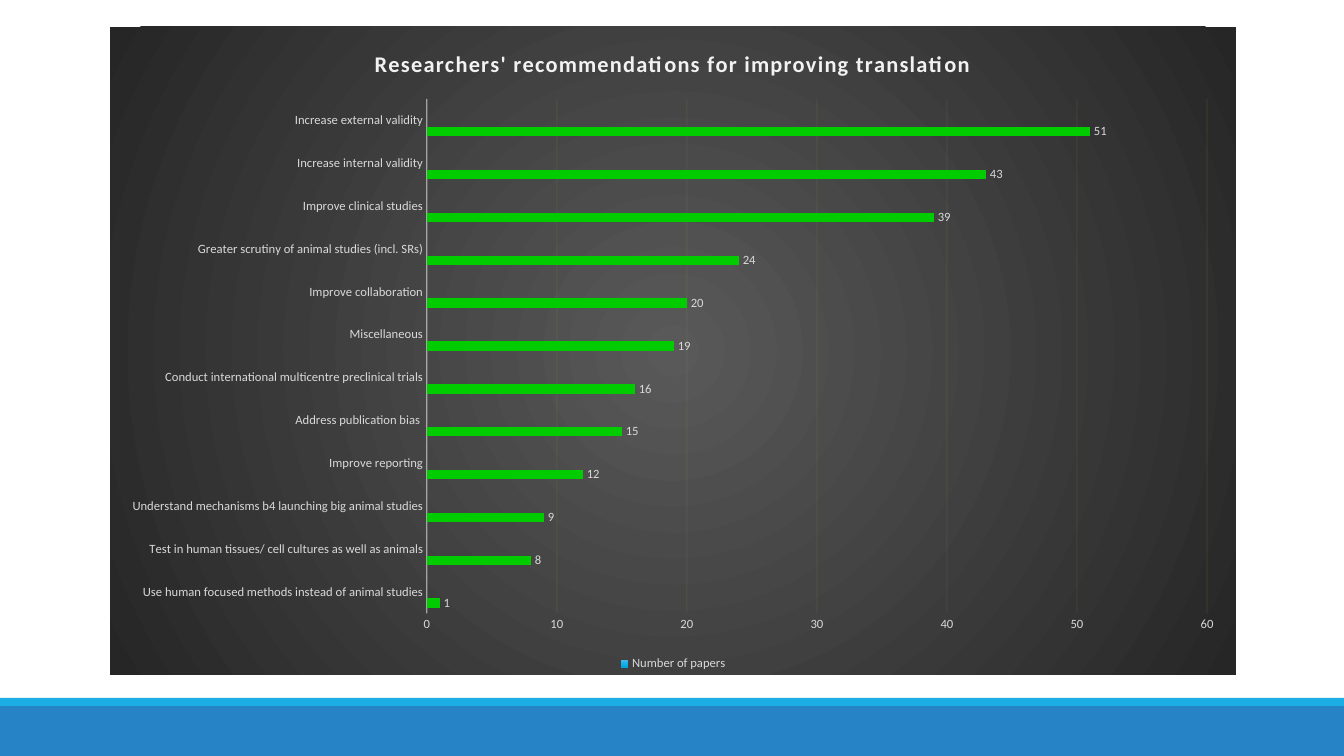
"""Build a slide with a bar chart of recommendations for improving translation."""
from dataclasses import dataclass

from lxml import etree
from pptx import Presentation
from pptx.chart.data import CategoryChartData
from pptx.dml.color import RGBColor
from pptx.enum.chart import XL_CHART_TYPE, XL_LABEL_POSITION, XL_LEGEND_POSITION, XL_TICK_MARK
from pptx.enum.shapes import MSO_SHAPE
from pptx.oxml.ns import qn
from pptx.util import Emu, Pt

BAR_CLUSTERED = XL_CHART_TYPE.BAR_CLUSTERED
OUTSIDE_END = XL_LABEL_POSITION.OUTSIDE_END
LEGEND_BOTTOM = XL_LEGEND_POSITION.BOTTOM
NO_TICKS = XL_TICK_MARK.NONE
RECTANGLE = MSO_SHAPE.RECTANGLE
EMU_PER_PX = 9144000 / 1008


@dataclass(frozen=True)
class Theme:
    font: str = "Calibri"
    title_size: int = 16
    text_size: int = 9
    title_color: str = "F2F2F2"
    text_color: str = "D9D9D9"
    axis_color: str = "F2F2F2"
    grid_color: str = "92D050"
    bar_color: str = "00CC00"
    band_color: str = "2683C6"
    stripe_color: str = "1CADE4"
    backdrop: tuple[str, ...] = ("595959", "262626")


@dataclass(frozen=True)
class Band:
    top: int
    height: int
    color: str


@dataclass(frozen=True)
class Series:
    name: str
    values: tuple
    gradient: tuple[str, ...]


THEME = Theme()
BANDS = (Band(706, 50, THEME.band_color), Band(698, 8, THEME.stripe_color))
PAPERS = {
    "Use human focused methods instead of animal studies": 1,
    "Test in human tissues/ cell cultures as well as animals": 8,
    "Understand mechanisms b4 launching big animal studies": 9,
    "Improve reporting": 12,
    "Address publication bias ": 15,
    "Conduct international multicentre preclinical trials": 16,
    "Miscellaneous": 19,
    "Improve collaboration": 20,
    "Greater scrutiny of animal studies (incl. SRs)": 24,
    "Improve clinical studies": 39,
    "Increase internal validity": 43,
    "Increase external validity": 51,
}
EMPTY = (None,) * len(PAPERS)
SERIES = (
    Series("Number of papers", tuple(PAPERS.values()), ("4FB6E9", "12B1EE", "06A2DD")),
    Series("Series 2", EMPTY, ("5191D0", "1E84CE", "1477BE")),
    Series("Column2", EMPTY, ("51CED6", "20CBD4", "15BBC4")),
)


def px(length: int) -> Emu:
    """Turn pixels into EMU."""
    return Emu(round(length * EMU_PER_PX))


def gradient_fill(colors: tuple[str, ...], radial: bool = False):
    """Return a gradient fill with evenly spaced stops."""
    fill = etree.Element(qn("a:gradFill"))
    stops = etree.SubElement(fill, qn("a:gsLst"))
    for index, color in enumerate(colors):
        position = str(100000 * index // (len(colors) - 1))
        stop = etree.SubElement(stops, qn("a:gs"), pos=position)
        etree.SubElement(stop, qn("a:srgbClr"), val=color)
    if radial:
        shade = etree.SubElement(fill, qn("a:path"), attrib={"path": "circle"})
        sides = dict.fromkeys("ltrb", "50000")
        etree.SubElement(shade, qn("a:fillToRect"), attrib=sides)
    else:
        etree.SubElement(fill, qn("a:lin"), ang="5400000", scaled="0")
    return fill


def style_font(font, size: int, color: str, bold: bool = False) -> None:
    """Set the face, size, weight and colour of a font."""
    font.name = THEME.font
    font.size = Pt(size)
    font.bold = bold
    font.color.rgb = RGBColor.from_string(color)


def style_line(owner, color: str, width: float, opacity: int) -> None:
    """Give an axis or its gridlines a translucent line."""
    line = owner.format.line
    line.color.rgb = RGBColor.from_string(color)
    line.width = Pt(width)
    properties = owner.format._element.find(qn("c:spPr"))
    for element in properties.iter(qn("a:srgbClr")):
        etree.SubElement(element, qn("a:alpha"), val=str(opacity * 1000))


def add_band(page, band: Band, width: Emu) -> None:
    """Draw one full-width band at the foot of the page."""
    box = page.shapes.add_shape(RECTANGLE, 0, px(band.top), width, px(band.height))
    box.shadow.inherit = False
    box.fill.solid()
    box.fill.fore_color.rgb = RGBColor.from_string(band.color)
    box.line.fill.background()


def style_title(chart, text: str) -> None:
    """Write the spaced bold chart title."""
    frame = chart.chart_title.text_frame
    span = frame.paragraphs[0].add_run()
    span.text = text
    style_font(span.font, THEME.title_size, THEME.title_color, bold=True)
    span.font._element.set("spc", "100")


def style_axes(chart) -> None:
    """Format both axes and the vertical gridlines."""
    for axis in (chart.category_axis, chart.value_axis):
        axis.major_tick_mark = axis.minor_tick_mark = NO_TICKS
        style_font(axis.tick_labels.font, THEME.text_size, THEME.text_color)
    chart.category_axis.has_major_gridlines = False
    style_line(chart.category_axis, THEME.axis_color, 1, 54)
    chart.value_axis.format.line.fill.background()
    chart.value_axis.has_major_gridlines = True
    style_line(chart.value_axis.major_gridlines, THEME.grid_color, 0.75, 10)


def style_series(plot) -> None:
    """Colour the bars and label them with their values."""
    plot.gap_width = 115
    plot.overlap = -20
    plot.vary_by_categories = False
    for series, source in zip(plot.series, SERIES):
        series.format.fill.solid()
        properties = series._element.find(qn("c:spPr"))
        properties.replace(properties[0], gradient_fill(source.gradient))
        labels = series.data_labels
        labels.show_value = True
        labels.position = OUTSIDE_END
        style_font(labels.font, THEME.text_size, THEME.text_color)
    for index in range(len(PAPERS)):
        fill = plot.series[0].points[index].format.fill
        fill.solid()
        fill.fore_color.rgb = RGBColor.from_string(THEME.bar_color)


def style_legend(chart) -> None:
    """Put the legend at the bottom and show only the filled series."""
    chart.has_legend = True
    legend = chart.legend
    legend.position = LEGEND_BOTTOM
    legend.include_in_layout = False
    style_font(legend.font, THEME.text_size, THEME.text_color)
    anchor = legend._element.find(qn("c:legendPos"))
    for index in (1, 0):
        entry = etree.Element(qn("c:legendEntry"))
        etree.SubElement(entry, qn("c:idx"), val=str(index))
        etree.SubElement(entry, qn("c:delete"), val="1")
        anchor.addnext(entry)


def add_papers_chart(page) -> None:
    """Add the bar chart on its dark radial backdrop."""
    data = CategoryChartData()
    data.categories = list(PAPERS)
    for series in SERIES:
        data.add_series(series.name, series.values)
    frame = page.shapes.add_chart(BAR_CLUSTERED, px(110), px(27), px(1126), px(648), data)
    chart = frame.chart
    style_font(chart.font, THEME.text_size, THEME.text_color)
    backdrop = etree.Element(qn("c:spPr"))
    backdrop.append(gradient_fill(THEME.backdrop, radial=True))
    chart._chartSpace.find(qn("c:txPr")).addprevious(backdrop)
    style_title(chart, "Researchers' recommendations for improving translation")
    style_axes(chart)
    style_series(chart.plots[0])
    style_legend(chart)


def main() -> None:
    """Build and save the deck."""
    deck = Presentation()
    deck.slide_width, deck.slide_height = px(1344), px(756)
    page = deck.slides.add_slide(deck.slide_layouts[6])
    for band in BANDS:
        add_band(page, band, deck.slide_width)
    add_papers_chart(page)
    deck.save("out.pptx")


if __name__ == "__main__":
    main()
